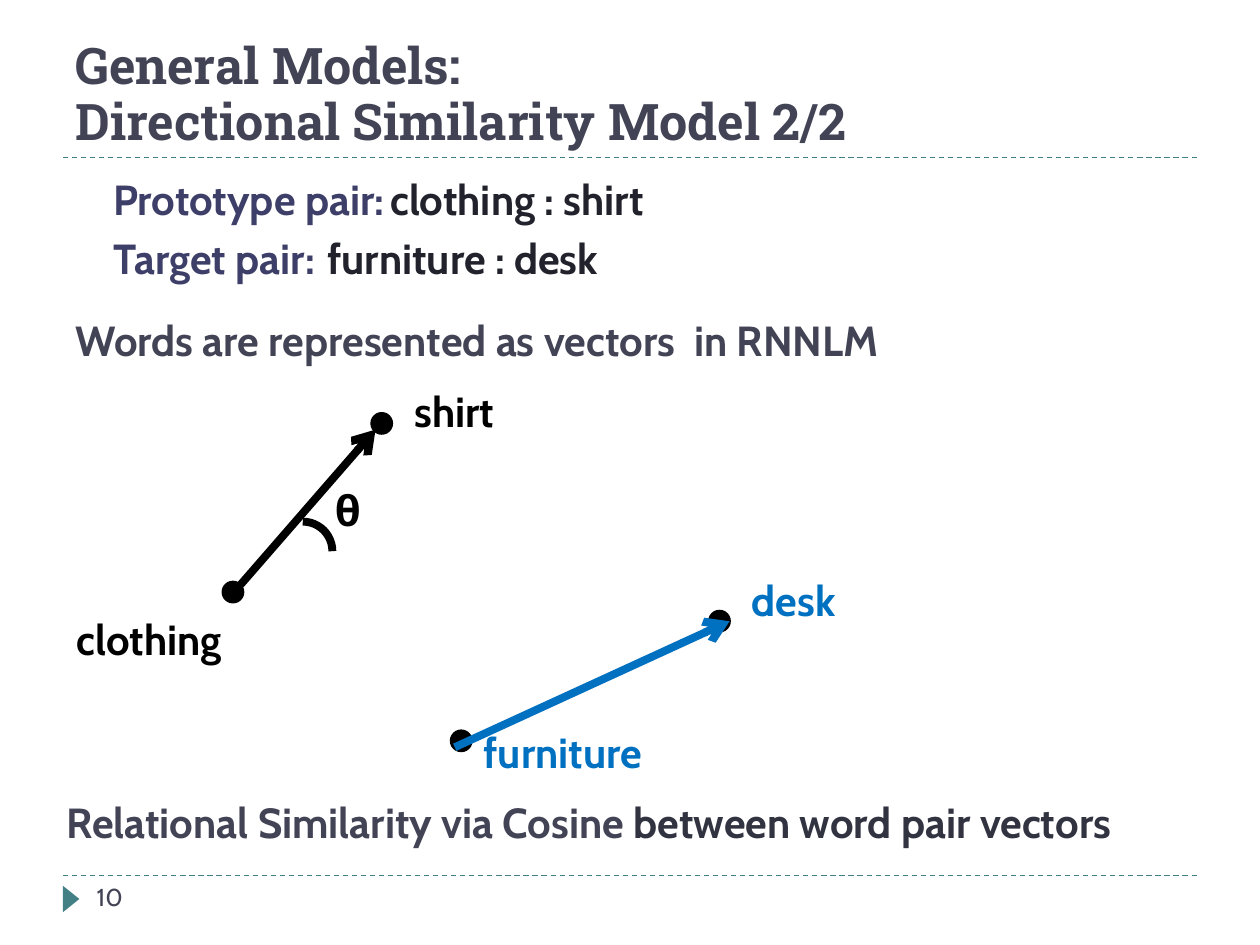
from lxml import etree
from pptx import Presentation
from pptx.dml.color import RGBColor
from pptx.enum.dml import MSO_LINE
from pptx.enum.shapes import MSO_CONNECTOR, MSO_SHAPE
from pptx.enum.text import MSO_ANCHOR
from pptx.oxml.ns import qn
from pptx.util import Pt

STRAIGHT = MSO_CONNECTOR.STRAIGHT
DASH = MSO_LINE.DASH
TOP, BOTTOM = MSO_ANCHOR.TOP, MSO_ANCHOR.BOTTOM
ARC, OVAL, TRIANGLE = MSO_SHAPE.ARC, MSO_SHAPE.OVAL, MSO_SHAPE.ISOSCELES_TRIANGLE

BLACK = RGBColor(0x00, 0x00, 0x00)
BLUE = RGBColor(0x00, 0x70, 0xC0)
TEAL = RGBColor(0x43, 0x80, 0x86)
SLATE = RGBColor(0x42, 0x44, 0x56)
DARK_SLATE = RGBColor(0x32, 0x33, 0x41)
INDIGO = RGBColor(0x3E, 0x3F, 0x68)
INK = RGBColor(0x21, 0x22, 0x2B)

deck = Presentation()
deck.slide_width, deck.slide_height = Pt(720), Pt(540)
page = deck.slides.add_slide(deck.slide_layouts[6])


def add_text(lines, left, top, width, height, size=24, font="Cabin", bold=True,
             anchor=TOP, spacing=None):
    """Each line is a list of (text, colour) spans; returns its paragraphs."""
    box = page.shapes.add_textbox(Pt(left), Pt(top), Pt(width), Pt(height))
    frame = box.text_frame
    frame.word_wrap = True
    frame.vertical_anchor = anchor
    for number, line in enumerate(lines):
        para = frame.add_paragraph() if number else frame.paragraphs[0]
        para.line_spacing = spacing
        for text, color in line:
            span = para.add_run()
            span.text = text
            span.font.name, span.font.size, span.font.bold = font, Pt(size), bold
            span.font.color.rgb = color
    return frame.paragraphs


def add_line(start, end, color, width):
    line = page.shapes.add_connector(STRAIGHT, *map(Pt, start + end))
    line.line.color.rgb = color
    line.line.width = Pt(width)
    etree.SubElement(line._element.spPr, qn("a:effectLst"))
    return line


# Frame of the page
for y in (500.4, 90):
    add_line((36, y), (684, y), TEAL, 0.75).line.dash_style = DASH

marker = page.shapes.add_shape(TRIANGLE, Pt(33.1), Pt(509), Pt(15.1), Pt(9.4))
marker.rotation = 90
marker.shadow.inherit = False
marker.fill.solid()
marker.fill.fore_color.rgb = TEAL
marker.line.fill.background()

add_text([[("General Models:", SLATE)], [("Directional Similarity Model 2/2", SLATE)]],
         36, 12.2, 648, 77.8, size=28.8, font="Roboto Slab", anchor=BOTTOM, spacing=0.92)
add_text([[("10", SLATE)]], 48.2, 500.4, 156.2, 28.8, size=14, bold=False)

# Word pairs, centred on a common tab stop
prototype, target, statement = add_text([
    [("Prototype pair:\t", INDIGO), ("clothing : shirt", INK)],
    [("Target pair:\t", INDIGO), ("furniture : desk", INK)],
    [("Words are represented as vectors  in RNNLM", SLATE)],
], 36, 95.8, 648, 388.8)
statement.space_before = Pt(18)
for para in (prototype, target):
    para.space_before = Pt(5)
    properties = para._p.get_or_add_pPr()
    properties.set("indent", str(Pt(21.6)))
    tabs = etree.SubElement(properties, qn("a:tabLst"))
    etree.SubElement(tabs, qn("a:tab"), pos=str(Pt(377)), algn="ctr")

# Vector diagram
for left, top in ((127.4, 332.6), (212.4, 236.2), (257.8, 417.6), (405.4, 349.2)):
    dot = page.shapes.add_shape(OVAL, Pt(left), Pt(top), Pt(11.5), Pt(11.5))
    dot.shadow.inherit = False
    dot.fill.solid()
    dot.fill.fore_color.rgb = BLACK
    dot.line.color.rgb = BLACK
    dot.line.width = Pt(1.5)

for word, left, top, width, color in (
    ("clothing", 36.7, 347, 130.3, BLACK),
    ("shirt", 229.7, 216.7, 90.7, BLACK),
    ("furniture", 269.3, 411.8, 130.3, BLUE),
    ("desk", 422.6, 324.7, 130.3, BLUE),
    ("θ", 184.3, 273.6, 39.6, BLACK),
):
    add_text([[(word, color)]], left, top, width, 36)

for start, end, color in (
    ((137.5, 334.1), (214.6, 245.5), BLACK),
    ((259.9, 427), (416.9, 355), BLUE),
):
    arrow = add_line(start, end, color, 4.5)
    etree.SubElement(arrow.line._get_or_add_ln(), qn("a:tailEnd"), type="arrow")

angle = page.shapes.add_shape(ARC, Pt(156.2), Pt(298.1), Pt(33.8), Pt(33.8))
angle.shadow.inherit = False
angle.fill.background()
angle.line.color.rgb = BLACK
angle.line.width = Pt(4.5)

add_text([[("Relational Similarity via Cosine ", SLATE),
           ("between word pair vectors", DARK_SLATE)]], 31, 451.4, 674.6, 36)

deck.save("out.pptx")
